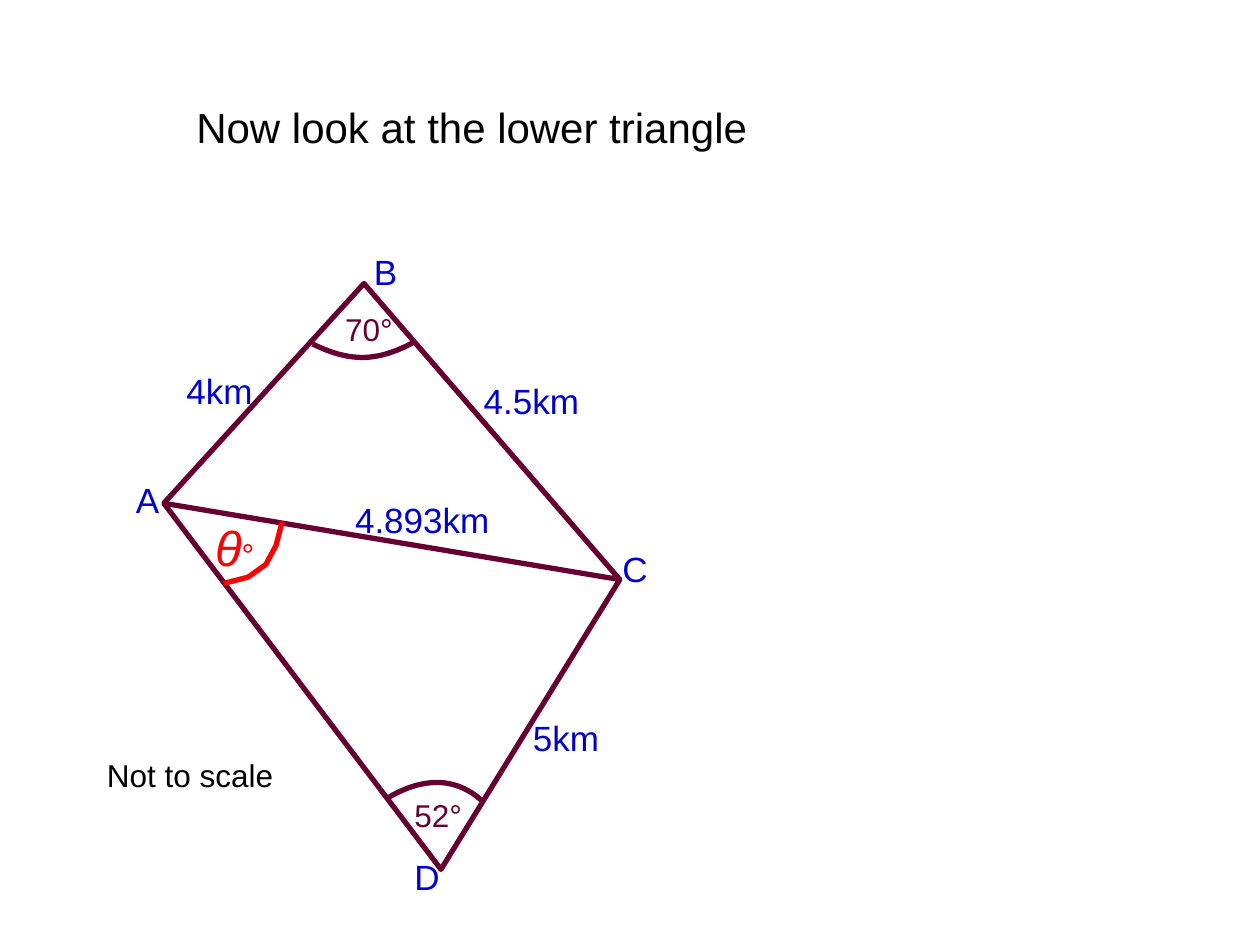
from pptx import Presentation
from pptx.dml.color import RGBColor
from pptx.enum.text import MSO_AUTO_SIZE
from pptx.util import Pt

FIT_SHAPE = MSO_AUTO_SIZE.SHAPE_TO_FIT_TEXT
BLUE, PLUM, RED, BLACK = "0000CC", "660033", "FF0000", "000000"
A, B, C, D = (93.6, 287.6), (208, 162), (354.2, 331.2), (252, 496.8)


def color(hex_value):
    """Turn a hex string into a colour."""
    return RGBColor.from_string(hex_value)


def add_run(paragraph, text, size=20, hex_value=BLUE, italic=False):
    """Append formatted text to a paragraph."""
    run = paragraph.add_run()
    run.text = text
    run.font.name = "Arial"
    run.font.size = Pt(size)
    run.font.italic = italic
    run.font.color.rgb = color(hex_value)


def add_label(shapes, text, left, top, width=56.9, height=31, **text_format):
    """Add a text box and return its paragraph."""
    label = shapes.add_textbox(Pt(left), Pt(top), Pt(width), Pt(height))
    label.text_frame.word_wrap = True
    label.text_frame.auto_size = FIT_SHAPE
    paragraph = label.text_frame.paragraphs[0]
    paragraph.space_before = Pt(2)
    add_run(paragraph, text, **text_format)
    return paragraph


def add_path(shapes, points, hex_value=PLUM):
    """Draw an unfilled open path through the points."""
    start, *rest = [(Pt(x), Pt(y)) for x, y in points]
    builder = shapes.build_freeform(*start)
    builder.add_line_segments(rest, close=False)
    path = builder.convert_to_shape()
    path.shadow.inherit = False
    path.fill.background()
    path.line.color.rgb = color(hex_value)
    path.line.width = Pt(3)


def curve(start, control_1, control_2, end, steps=20):
    """Return points along a cubic curve."""
    points = []
    for step in range(steps + 1):
        t = step / steps
        weights = ((1 - t) ** 3, 3 * t * (1 - t) ** 2, 3 * t**2 * (1 - t), t**3)
        corners = (start, control_1, control_2, end)
        points.append([sum(w * p[axis] for w, p in zip(weights, corners)) for axis in (0, 1)])
    return points


def add_unknown_angle(shapes):
    """Group the theta arc with its label."""
    angle = shapes.add_group_shape().shapes
    arc = [(161.3, 298.1), (157.7, 311.8), (151.9, 322.6), (141.8, 329.8), (127.8, 333.4)]
    add_path(angle, arc, RED)
    theta = add_label(angle, "θ", 115.9, 292.3, 45.4, 41, size=28, hex_value=RED, italic=True)
    add_run(theta, "°", size=18, hex_value=RED)


def main():
    """Build the slide."""
    deck = Presentation()
    deck.slide_width, deck.slide_height = Pt(720), Pt(540)
    shapes = deck.slides.add_slide(deck.slide_layouts[6]).shapes

    add_path(shapes, [A, B, C, D, A, C])
    for text, left, top, width in (
        ("4km", 99.4, 207.4, 56.9),
        ("4.5km", 269.3, 213.1, 79.2),
        ("A", 70.6, 270, 56.9),
        ("5km", 297.4, 406.1, 56.9),
        ("B", 206.6, 139.7, 56.9),
        ("C", 348.5, 309.6, 56.9),
        ("D", 229.7, 485.3, 56.9),
    ):
        add_label(shapes, text, left, top, width)
    add_label(shapes, "Not to scale", 54, 428.4, 130.3, 28.8, size=18, hex_value=BLACK)

    add_path(shapes, curve((178.6, 196.6), (200, 207), (215, 207), (236.2, 195.8)))
    add_path(shapes, curve((221.8, 455.8), (240, 445), (259, 443), (275, 457.2)))
    for text, left, top in (("70°", 190.1, 173.5), ("52°", 229.7, 451.4)):
        add_label(shapes, text, left, top, 45.4, 28.8, size=18, hex_value=PLUM)

    add_unknown_angle(shapes)
    add_label(shapes, "4.893km", 195.8, 281.5, 107.3)
    add_label(shapes, "Now look at the lower triangle", 105.1, 54.7, 465.1, 36,
              size=24, hex_value=BLACK)
    deck.save("out.pptx")


if __name__ == "__main__":
    main()
